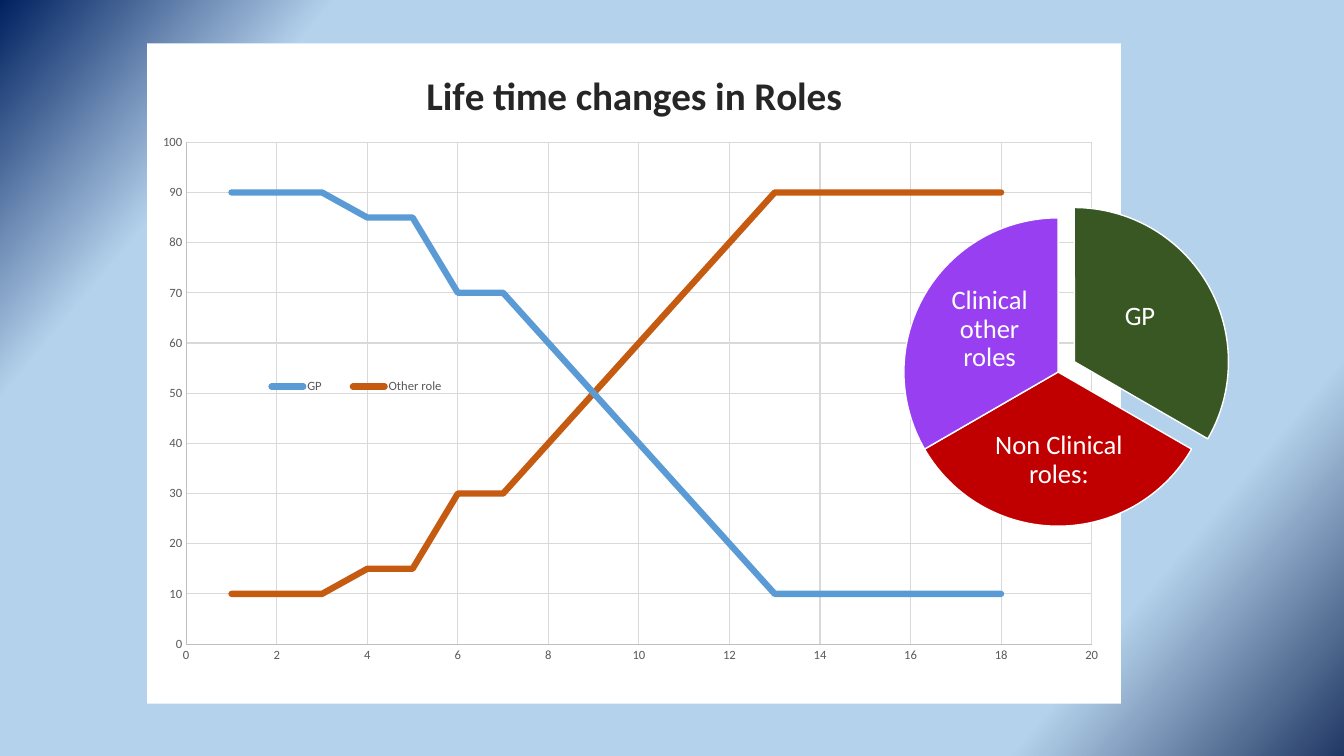
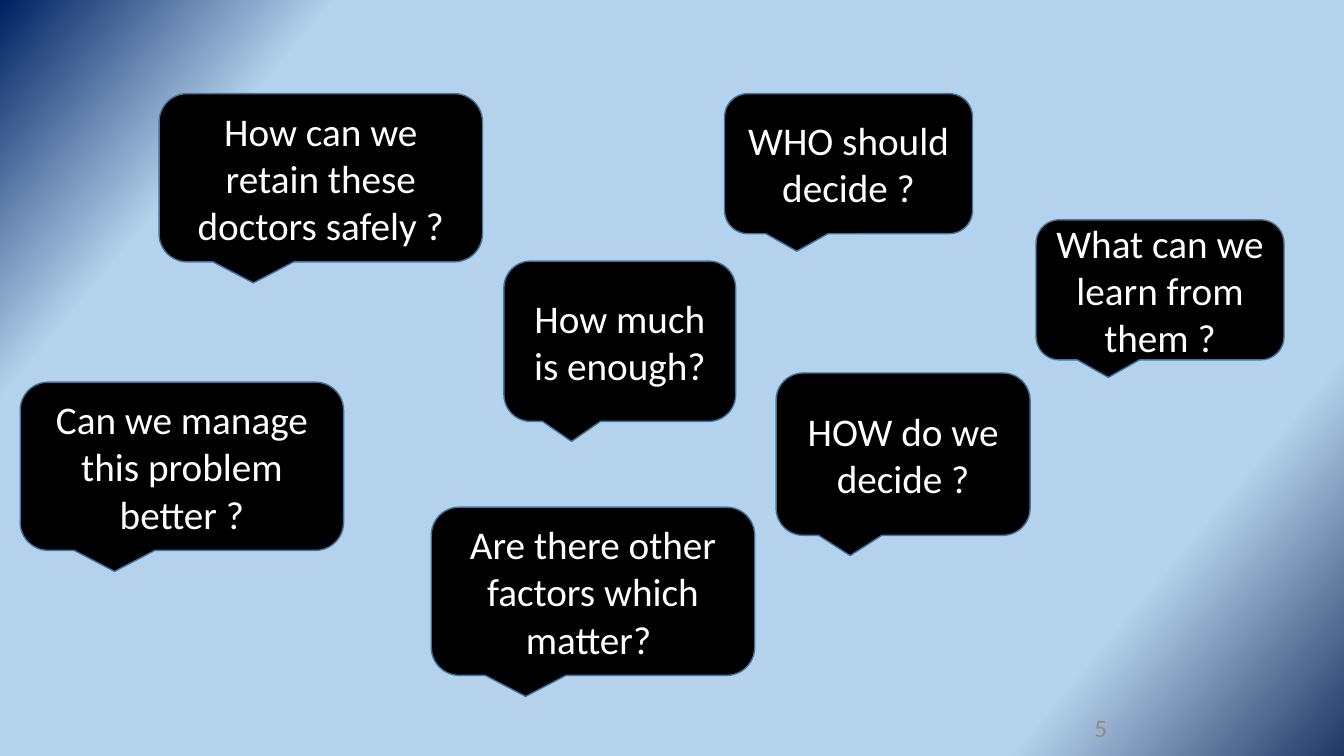
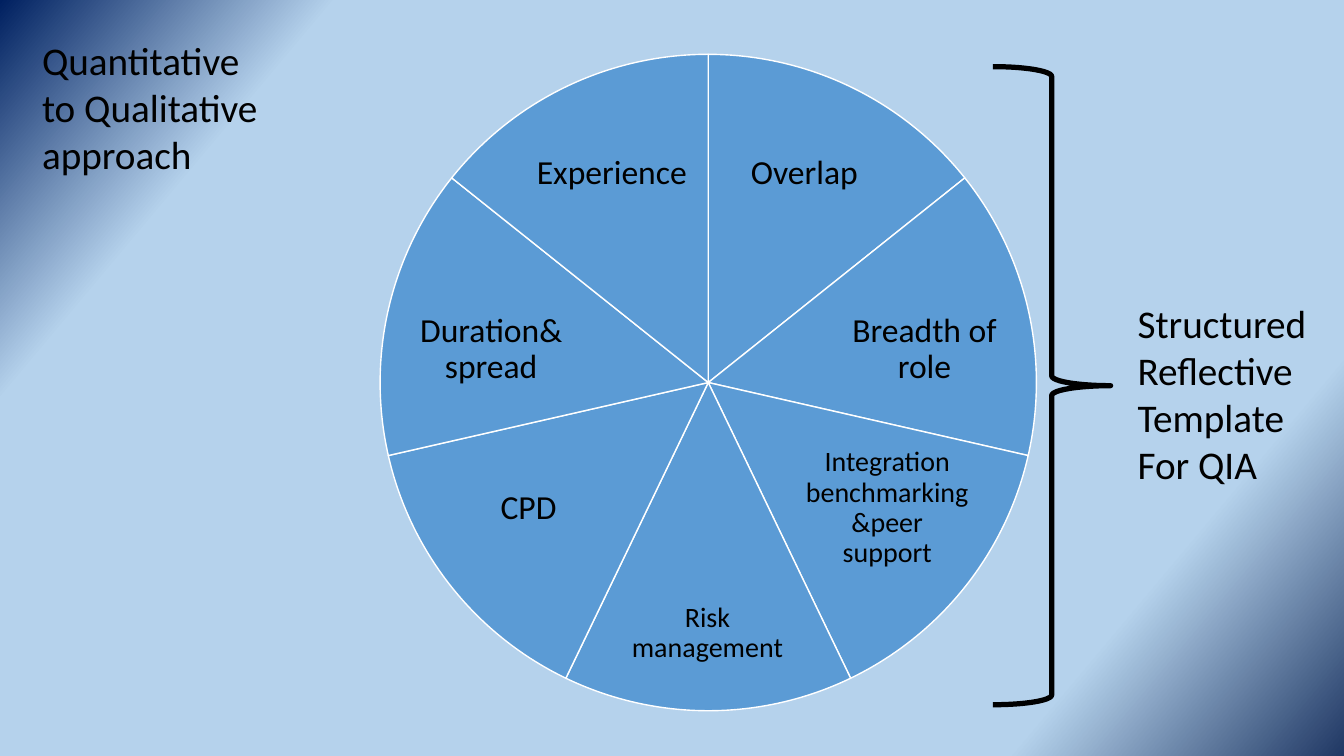
from copy import deepcopy

from lxml.etree import SubElement
from pptx import Presentation
from pptx.chart.data import XyChartData
from pptx.dml.color import RGBColor
from pptx.enum.chart import XL_CHART_TYPE, XL_LEGEND_POSITION, XL_TICK_MARK
from pptx.enum.shapes import MSO_SHAPE
from pptx.enum.text import MSO_ANCHOR, PP_ALIGN
from pptx.oxml import parse_xml
from pptx.oxml.ns import nsdecls, qn
from pptx.util import Cm, Pt

WHITE, BLACK, BLUE, ORANGE = "FFFFFF", "000000", "5B9BD5", "C55A11"
BACKDROP = [(0, "002060"), (0.17, "B5D2EC"), (0.83, "B5D2EC"), (1, "203864")]


def rgb(hex_code):
    """Turn a hex string into a colour."""
    return RGBColor.from_string(hex_code)


def assign(target, values):
    """Set each named attribute of the target."""
    for name, value in values.items():
        setattr(target, name, value)


def place(part, index, x, y, w, h, inner=False):
    """Fix a chart part at fractions of the chart area."""
    for previous in part.findall(qn("c:layout")):
        part.remove(previous)
    target = '<c:layoutTarget val="inner"/>' if inner else ""
    layout = parse_xml(f"<c:layout {nsdecls('c')}><c:manualLayout>{target}</c:manualLayout></c:layout>")
    values = {"xMode": "edge", "yMode": "edge", "x": x, "y": y, "w": w, "h": h}
    for name, value in values.items():
        SubElement(layout[0], qn(f"c:{name}")).set("val", str(value))
    part.insert(index, layout)


class Deck:
    """Holds the shared style and the current slide."""

    def __init__(self):
        """Set the slide size and the shared background."""
        self.show = Presentation()
        assign(self.show, {"slide_width": Cm(33.87), "slide_height": Cm(19.05)})
        master = self.show.slide_master
        backdrop = master.background.fill
        backdrop.gradient()
        backdrop.gradient_angle = 320
        stops = master.element.find(".//" + qn("a:gsLst"))
        while len(stops) < len(BACKDROP):
            stops.append(deepcopy(stops[0]))
        for stop, (position, color) in zip(backdrop.gradient_stops, BACKDROP):
            stop.position = position
            stop.color.rgb = rgb(color)

    def add_slide(self):
        """Start a blank slide."""
        self.slide = self.show.slides.add_slide(self.show.slide_layouts[6])

    def style(self, font, size, color, bold=False):
        """Apply the deck's typeface."""
        assign(font, {"name": "Calibri", "size": Pt(size), "bold": bold})
        font.color.rgb = rgb(color)

    def stroke(self, line, color, width):
        """Draw a line in one colour and width."""
        line.color.rgb = rgb(color)
        line.width = Pt(width)

    def set_words(self, frame, lines, size, color, align, anchor, spacing=None):
        """Fill a text frame with one paragraph per line."""
        assign(frame, {"text": "\n".join(lines), "word_wrap": True, "vertical_anchor": anchor})
        for paragraph in frame.paragraphs:
            assign(paragraph, {"alignment": align, "line_spacing": spacing})
            self.style(paragraph.font, size, color)

    def text(self, box, lines, size=28, color=BLACK, align=PP_ALIGN.LEFT, anchor=MSO_ANCHOR.TOP):
        """Add a free text box."""
        frame = self.slide.shapes.add_textbox(*map(Cm, box)).text_frame
        self.set_words(frame, lines, size, color, align, anchor)

    def label(self, box, words, size, color):
        """Add a tight, centred label."""
        frame = self.slide.shapes.add_textbox(*map(Cm, box)).text_frame
        assign(frame, {f"margin_{side}": Cm(0.08) for side in ("left", "right", "top", "bottom")})
        self.set_words(frame, [words], size, color, PP_ALIGN.CENTER, MSO_ANCHOR.MIDDLE, 0.9)

    def shape(self, kind, box, fill, line, width=1):
        """Add a preset shape."""
        shape = self.slide.shapes.add_shape(kind, *map(Cm, box))
        shape.shadow.inherit = False
        if fill:
            shape.fill.solid()
            shape.fill.fore_color.rgb = rgb(fill)
        else:
            shape.fill.background()
        self.stroke(shape.line, line, width)
        return shape

    def sector(self, left, top, diameter, index, count, fill):
        """Add one of several equal sectors, clockwise from the top."""
        sector = self.shape(MSO_SHAPE.PIE, (left, top, diameter, diameter), fill, WHITE)
        for side in range(2):
            degrees = (270 + (index + side) * 360 / count) % 360
            sector.adjustments[side] = degrees * 0.6

    def callout(self, box, question):
        """Add a speech bubble with a question."""
        bubble = self.shape(MSO_SHAPE.ROUNDED_RECTANGULAR_CALLOUT, box, BLACK, "43739E")
        self.set_words(bubble.text_frame, [question], 28, WHITE, PP_ALIGN.CENTER, MSO_ANCHOR.MIDDLE)

    def scatter(self, box, title, series, colors):
        """Add a titled line scatter chart."""
        points = XyChartData()
        for name, values in series.items():
            trend = points.add_series(name)
            for x, y in enumerate(values, 1):
                trend.add_data_point(x, y)
        kind = XL_CHART_TYPE.XY_SCATTER_LINES_NO_MARKERS
        chart = self.slide.shapes.add_chart(kind, *map(Cm, box), points).chart
        self.style(chart.font, 10, BLACK)
        assign(chart, {"has_title": True, "has_legend": True})
        chart.chart_title.text_frame.text = title
        self.style(chart.chart_title.text_frame.paragraphs[0].font, 28, "262626", True)
        assign(chart.legend, {"position": XL_LEGEND_POSITION.BOTTOM, "include_in_layout": False})
        self.style(chart.legend.font, 9, "595959")
        for axis, top, step in ((chart.category_axis, 20, 2), (chart.value_axis, 100, 10)):
            assign(axis, {
                "minimum_scale": 0, "maximum_scale": top, "major_unit": step,
                "has_major_gridlines": True, "major_tick_mark": XL_TICK_MARK.NONE,
                "minor_tick_mark": XL_TICK_MARK.NONE,
            })
            self.style(axis.tick_labels.font, 9, "595959")
            self.stroke(axis.format.line, "BFBFBF", 0.75)
            self.stroke(axis.major_gridlines.format.line, "D9D9D9", 0.75)
        plot = chart.plots[0]
        plot.vary_by_categories = False
        for trend, color in zip(plot.series, colors):
            self.stroke(trend.format.line, color, 4.5)
        body = chart.element.find(qn("c:chart"))
        for trend in body.iter(qn("c:ser")):
            outline = trend.find(f"{qn('c:spPr')}/{qn('a:ln')}")
            outline.set("cap", "rnd")
            SubElement(outline, qn("a:round"))
        body.addnext(parse_xml(
            f'<c:spPr {nsdecls("c", "a")}><a:solidFill><a:srgbClr val="{WHITE}"/></a:solidFill>'
            "<a:ln><a:noFill/></a:ln></c:spPr>"))
        place(body.find(qn("c:plotArea")), 0, 0.04, 0.15, 0.93, 0.76, True)
        place(body.find(qn("c:legend")), 1, 0.1, 0.5, 0.23, 0.04)


def roles_slide(deck):
    """Show how roles change over a lifetime."""
    deck.add_slide()
    gp = [90] * 3 + [85] * 2 + [70] * 2 + list(range(60, 10, -10)) + [10] * 6
    series = {"GP": gp, "Other role": [100 - share for share in gp]}
    deck.scatter((3.71, 1.09, 24.54, 16.64), "Life time changes in Roles", series, (BLUE, ORANGE))
    roles = [
        ("GP", "385723", (23.19, 5.23), (27.41, 6.68, 2.64, 2.59)),
        ("Non Clinical roles:", "C00000", (22.78, 5.49), (24.92, 10.39, 3.53, 2.41)),
        ("Clinical other roles", "983FF1", (22.78, 5.49), (23.62, 7.01, 2.64, 2.59)),
    ]
    for index, (role, fill, corner, box) in enumerate(roles):
        deck.sector(*corner, 7.77, index, len(roles), fill)
        deck.label(box, role, 19, WHITE)


def questions_slide(deck):
    """Scatter the open questions over the slide."""
    deck.add_slide()
    large, small = (8.15, 4.24), (6.25, 3.53)
    questions = [
        ((4.01, 2.36), large, "How can we retain these doctors safely ?"),
        ((0.51, 9.63), large, "Can we manage this problem better ?"),
        ((18.26, 2.36), small, "WHO should decide ?"),
        ((19.56, 9.4), (6.4, 4.09), "HOW do we decide ?"),
        ((12.7, 6.58), (5.84, 4.04), "How much is enough?"),
        ((10.87, 12.78), large, "Are there other factors which matter? "),
        ((26.11, 5.54), small, "What can we learn from them ?"),
    ]
    for corner, size, question in questions:
        deck.callout(corner + size, question)
    deck.text((23.93, 17.65, 7.62, 1.35), ["5"], 18, "8C8C8C", PP_ALIGN.CENTER, MSO_ANCHOR.MIDDLE)


def template_slide(deck):
    """Show the seven parts of the reflective template."""
    deck.add_slide()
    parts = [
        ("Overlap", 24, (18.01, 2.95, 4.52, 2.84)),
        ("Breadth of role", 24, (20.9, 7.29, 4.8, 3.05)),
        ("Integration benchmarking &peer support", 20, (20.19, 11.23, 4.34, 3.15)),
        ("Risk management", 20, (15.62, 14.38, 4.42, 3.15)),
        ("CPD", 24, (11.15, 11.23, 4.34, 3.15)),
        ("Duration& spread", 24, (9.98, 7.29, 4.8, 3.05)),
        ("Experience", 24, (13.16, 2.95, 4.52, 2.84)),
    ]
    for index, (part, size, box) in enumerate(parts):
        deck.sector(9.58, 1.37, 16.54, index, len(parts), BLUE)
        deck.label(box, part, size, BLACK)
    deck.shape(MSO_SHAPE.RIGHT_BRACE, (25.02, 1.68, 2.97, 16.08), None, BLACK, 3.75)
    deck.text((28.42, 7.42, 5.28, 5.05), ["Structured", "Reflective Template", "For QIA"])
    deck.text((0.81, 0.79, 5.94, 3.84), ["Quantitative to Qualitative approach"])


def main():
    """Build and save the deck."""
    deck = Deck()
    for build in (roles_slide, questions_slide, template_slide):
        build(deck)
    deck.show.save("out.pptx")


if __name__ == "__main__":
    main()
